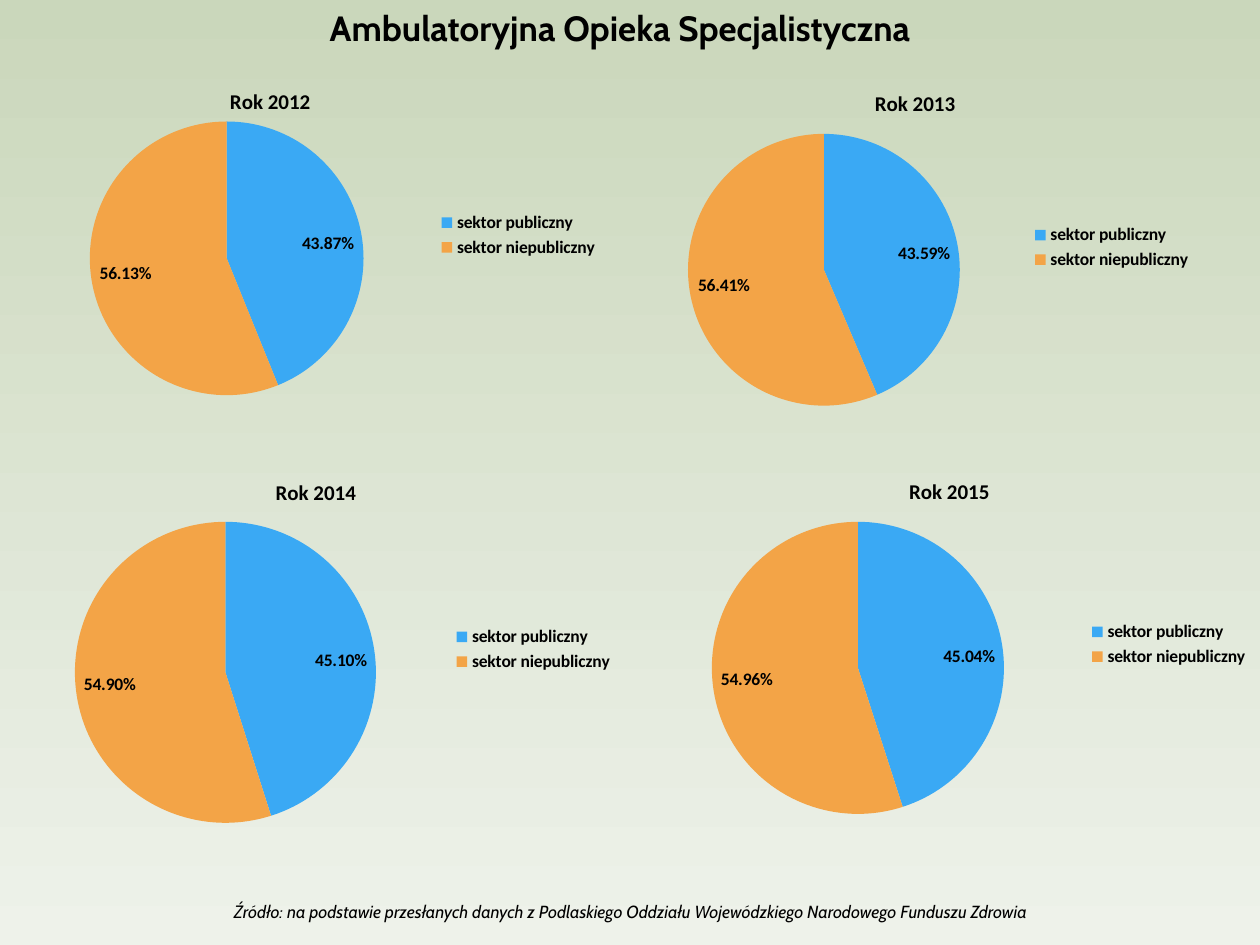
from dataclasses import dataclass

from pptx import Presentation
from pptx.chart.data import CategoryChartData
from pptx.dml.color import RGBColor
from pptx.enum.chart import XL_CHART_TYPE as Kind, XL_LABEL_POSITION as Spot
from pptx.enum.chart import XL_LEGEND_POSITION as Side
from pptx.enum.text import MSO_ANCHOR as Anchor, PP_ALIGN as Align
from pptx.oxml import parse_xml
from pptx.oxml.ns import nsdecls, qn
from pptx.util import Cm, Pt

SECTORS = {"sektor publiczny": "3AA9F4", "sektor niepubliczny": "F3A447"}


@dataclass
class Pie:
    """One year's chart; all lengths are centimetres on the slide."""
    year: int
    public: float
    box: tuple[float, float, float, float]
    disc: tuple[float, float, float]  # left, top, diameter
    title: tuple[float, float]
    key: tuple[float, float]


PIES = [
    Pie(2012, 0.4387, (0.38, 1.07, 11.91, 7.26), (1.81, 2.45, 5.52), (4.56, 1.69), (8.79, 4.19)),
    Pie(2013, 0.4359, (12.5, 1.32, 11.76, 7.21), (13.87, 2.7, 5.48), (17.56, 1.73), (20.75, 4.44)),
    Pie(2014, 0.451, (0, 9.12, 12.6, 7.8), (1.51, 10.52, 6.07), (5.48, 9.56), (9.09, 12.54)),
    Pie(2015, 0.4504, (12.7, 9.12, 12.7, 7.62), (14.35, 10.52, 5.89), (18.25, 9.54), (21.9, 12.44)),
]


def rgb(code: str) -> RGBColor:
    return RGBColor.from_string(code)


def style(font, **values) -> None:
    font.color.rgb = rgb("000000")
    for name, value in values.items():
        setattr(font, name, value)


def place(part, index: int, box: tuple, left: float, top: float, size: float = 0) -> None:
    """Give a chart part a manual layout from its position on the slide."""
    for old in part.findall(qn("c:layout")):
        part.remove(old)
    x, y, width, height = box
    values = {"xMode": "edge", "yMode": "edge",
              "x": (left - x) / width, "y": (top - y) / height}
    if size:
        values |= {"w": size / width, "h": size / height}
    inner = '<c:layoutTarget val="inner"/>' if size else ""
    tags = "".join(f'<c:{tag} val="{value}"/>' for tag, value in values.items())
    part.insert(index, parse_xml(
        f'<c:layout {nsdecls("c")}><c:manualLayout>{inner}{tags}</c:manualLayout></c:layout>'))


def draw_pie(slide, pie: Pie) -> None:
    data = CategoryChartData(number_format="0.00%")
    data.categories = list(SECTORS)
    data.add_series("Series 1", (pie.public, round(1 - pie.public, 4)))
    chart = slide.shapes.add_chart(Kind.PIE, *map(Cm, pie.box), data).chart
    style(chart.font, name="Calibri", size=Pt(10), bold=True)

    chart.has_title = True
    frame = chart.chart_title.text_frame
    frame.text = f"Rok {pie.year}"
    style(frame.paragraphs[0].runs[0].font, name="Calibri", size=Pt(12), bold=True)

    chart.has_legend = True
    chart.legend.position = Side.RIGHT
    chart.legend.include_in_layout = False

    plot = chart.plots[0]
    plot.vary_by_categories = True
    for i, color in enumerate(SECTORS.values()):
        fill = plot.series[0].points[i].format.fill
        fill.solid()
        fill.fore_color.rgb = rgb(color)
    plot.has_data_labels = True
    label_values = {"show_value": True, "show_percentage": False, "number_format": "0.00%",
                    "number_format_is_linked": False, "position": Spot.INSIDE_END}
    for name, value in label_values.items():
        setattr(plot.data_labels, name, value)

    area = chart._chartSpace.find(qn("c:chart")).find(qn("c:plotArea"))
    place(area, 0, pie.box, *pie.disc)
    place(chart.chart_title._element, 1, pie.box, *pie.title)
    place(chart.legend._element, 1, pie.box, *pie.key)


def write(shape, text: str, box: tuple, **values) -> None:
    shape.left, shape.top, shape.width, shape.height = map(Cm, box)
    frame = shape.text_frame
    frame.word_wrap = True
    frame.vertical_anchor = Anchor.MIDDLE
    frame.text = text
    line = frame.paragraphs[0]
    line.alignment = Align.CENTER
    style(line.runs[0].font, name="Cabin", **values)


def main() -> None:
    deck = Presentation()
    deck.slide_width, deck.slide_height = Cm(25.4), Cm(19.05)
    slide = deck.slides.add_slide(deck.slide_layouts[5])
    back = slide.background.fill
    back.gradient()
    back.gradient_angle = 270
    for stop, color in zip(back.gradient_stops, ("CAD7BB", "EEF2EA")):
        stop.color.rgb = rgb(color)

    write(slide.shapes.title, "Ambulatoryjna Opieka Specjalistyczna",
          (3.7, 0, 17.6, 1.12), size=Pt(20), bold=True)
    for pie in PIES:
        draw_pie(slide, pie)
    note = slide.shapes.add_textbox(0, 0, 0, 0)
    write(note, "Źródło: na podstawie przesłanych danych z Podlaskiego Oddziału "
          "Wojewódzkiego Narodowego Funduszu Zdrowia",
          (3.3, 18.03, 18.8, 0.69), size=Pt(10), italic=True)
    deck.save("out.pptx")


if __name__ == "__main__":
    main()
